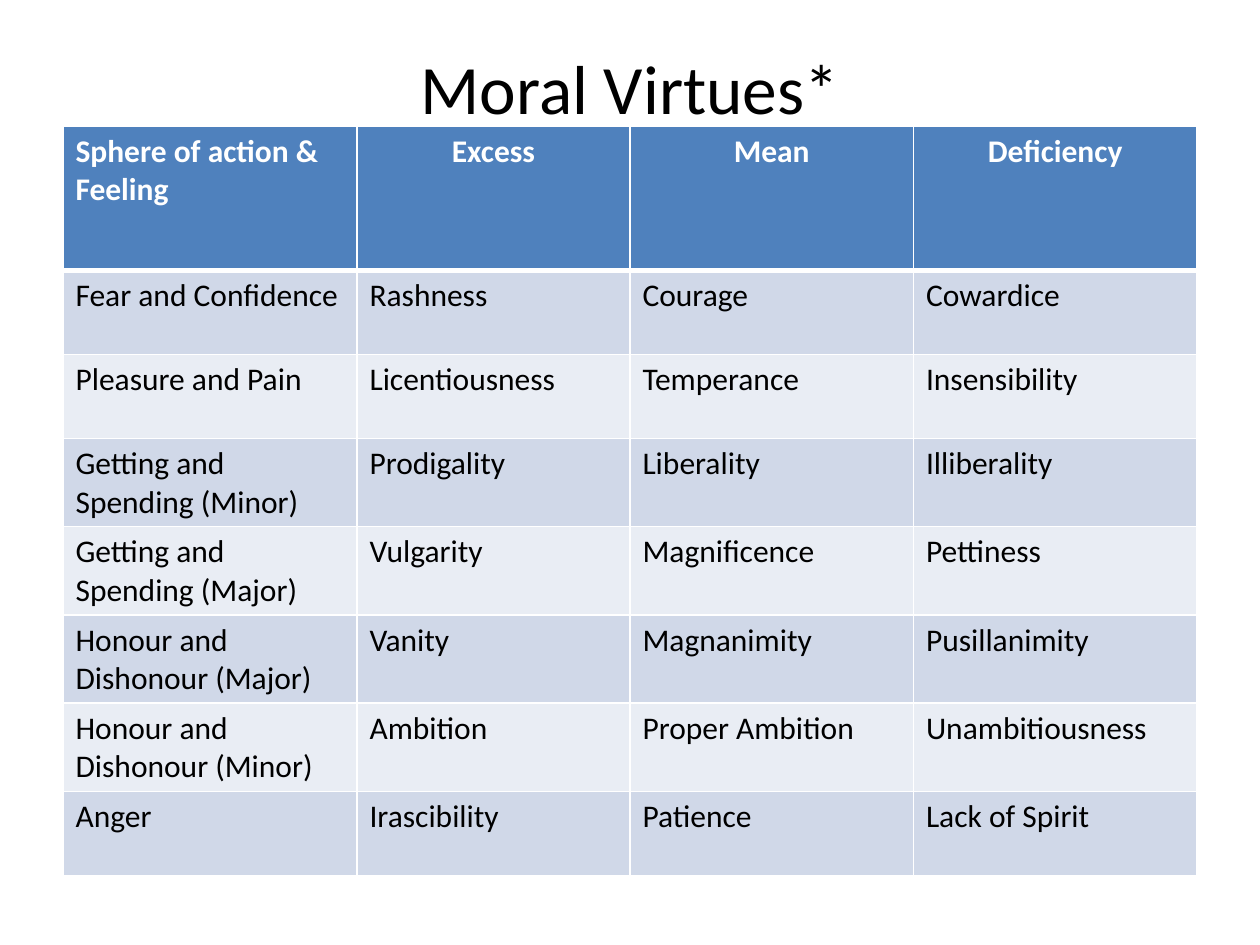
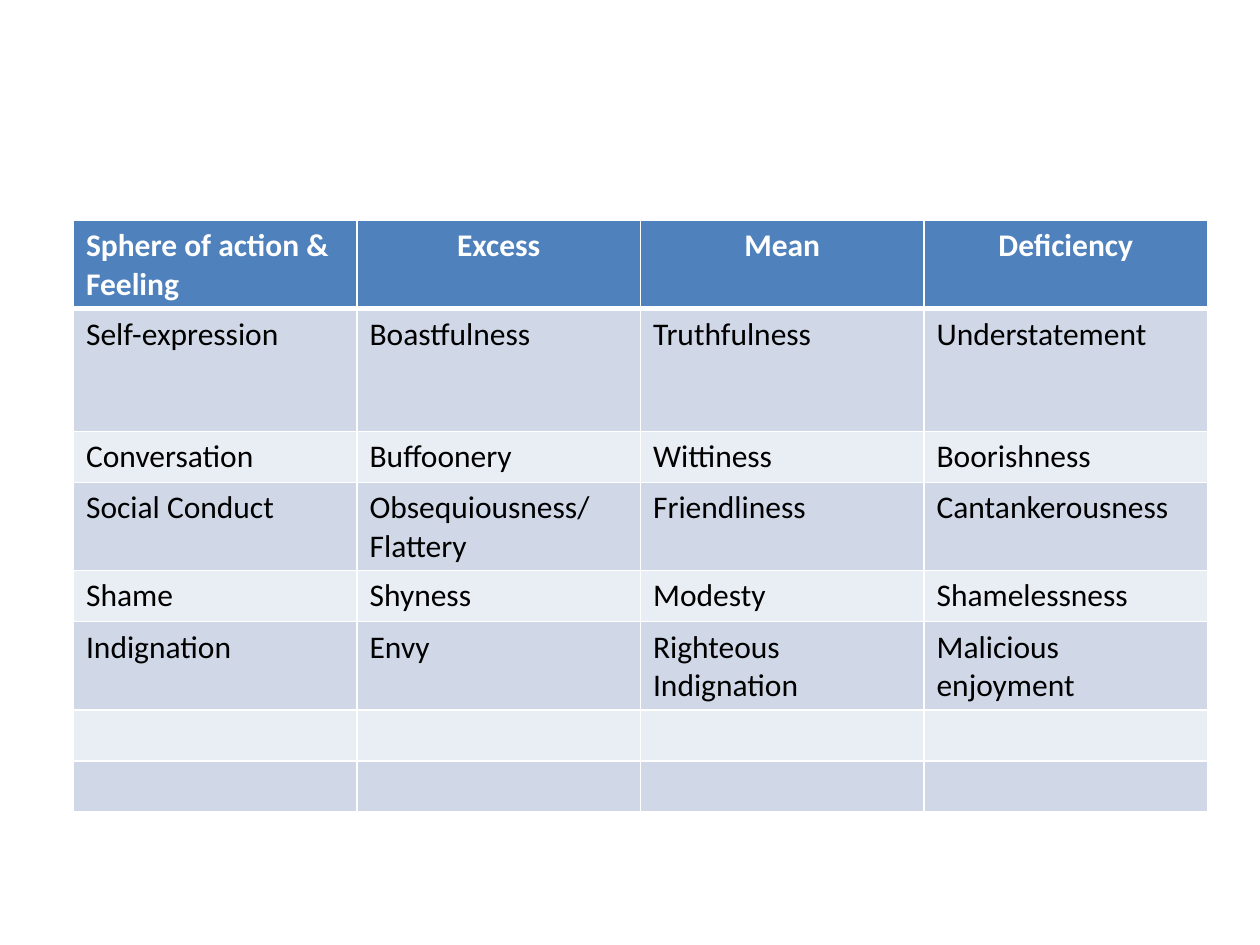
from dataclasses import dataclass

import pptx
import pptx.dml.color
import pptx.enum.text
import pptx.oxml
import pptx.oxml.ns
import pptx.util
from pptx.slide import Slide
from pptx.table import _Cell

# The slide is a grid of 120 columns by 90 rows.
WIDE, HIGH = pptx.util.Inches(10), pptx.util.Inches(7.5)
COLS, ROWS = 120, 90

FONT = "Calibri"
WHITE, BLACK = "FFFFFF", "000000"
HEAD = "4F81BD"
BANDS = ("D0D8E8", "E9EDF4")
THIN, THICK = 1, 3
LABELS = ("Sphere of action & Feeling", "Excess", "Mean", "Deficiency")
MID = pptx.enum.text.PP_ALIGN.CENTER
LEFT = pptx.enum.text.PP_ALIGN.LEFT


@dataclass(frozen=True)
class Chart:
    """A table of virtues, with its place and sizes in grid units."""
    left: float
    top: float
    cols: tuple[float, ...]
    rows: tuple[float, ...]
    body: tuple[tuple[str, ...], ...]
    title: str = ""


VICES = (
    Chart(6, 12, (28, 26, 27, 27), (13.75,) + (8,) * 7, (
        ("Fear and Confidence", "Rashness", "Courage", "Cowardice"),
        ("Pleasure and Pain", "Licentiousness", "Temperance", "Insensibility"),
        ("Getting and Spending (Minor)", "Prodigality", "Liberality", "Illiberality"),
        ("Getting and Spending (Major)", "Vulgarity", "Magnificence", "Pettiness"),
        ("Honour and Dishonour (Major)", "Vanity", "Magnanimity", "Pusillanimity"),
        ("Honour and Dishonour (Minor)", "Ambition", "Proper Ambition", "Unambitiousness"),
        ("Anger", "Irascibility", "Patience", "Lack of Spirit"),
    ), "Moral Virtues*"),
    Chart(7, 21, (27,) * 4, (4.87, 11.67) + (4.87,) * 6, (
        ("Self-expression", "Boastfulness", "Truthfulness", "Understatement"),
        ("Conversation", "Buffoonery", "Wittiness", "Boorishness"),
        ("Social Conduct", "Obsequiousness/\nFlattery", "Friendliness", "Cantankerousness"),
        ("Shame", "Shyness", "Modesty", "Shamelessness"),
        ("Indignation", "Envy", "Righteous Indignation", "Malicious enjoyment"),
        ("",) * 4,
        ("",) * 4,
    )),
)


def across(cols: float) -> int:
    return round(WIDE * cols / COLS)


def down(rows: float) -> int:
    return round(HIGH * rows / ROWS)


def color(code: str) -> pptx.dml.color.RGBColor:
    return pptx.dml.color.RGBColor.from_string(code)


def write(frame, text: str, size: float, ink: str, bold: bool, align) -> None:
    frame.text = text
    for para in frame.paragraphs:
        para.alignment = align
        font = para.font
        font.name, font.size, font.bold = FONT, pptx.util.Pt(size), bold
        font.color.rgb = color(ink)


def edge(cell: _Cell, top: int, foot: int) -> None:
    """Draw white borders; call before filling, as lines precede the fill."""
    for side, width in (("L", THIN), ("R", THIN), ("T", top), ("B", foot)):
        cell._tc.get_or_add_tcPr().append(pptx.oxml.parse_xml(
            f'<a:ln{side} {pptx.oxml.ns.nsdecls("a")} w="{pptx.util.Pt(width)}">'
            f'<a:solidFill><a:srgbClr val="{WHITE}"/></a:solidFill></a:ln{side}>'))


def add_title(slide: Slide, text: str) -> None:
    box = slide.shapes.add_textbox(across(6), down(3.6), across(108), down(9.4))
    frame = box.text_frame
    frame.word_wrap = True
    frame.vertical_anchor = pptx.enum.text.MSO_ANCHOR.MIDDLE
    write(frame, text, 39.6, BLACK, False, MID)


def add_chart(slide: Slide, chart: Chart) -> None:
    lines = (LABELS,) + chart.body
    table = slide.shapes.add_table(
        len(lines), len(LABELS), across(chart.left), down(chart.top),
        across(sum(chart.cols)), down(sum(chart.rows))).table
    for col, size in zip(table.columns, chart.cols):
        col.width = across(size)
    for row, size in zip(table.rows, chart.rows):
        row.height = down(size)
    for r, line in enumerate(lines):
        head = r == 0
        for c, text in enumerate(line):
            cell = table.cell(r, c)
            edge(cell, THICK if r == 1 else THIN, THICK if head else THIN)
            cell.fill.solid()
            cell.fill.fore_color.rgb = color(HEAD if head else BANDS[(r - 1) % 2])
            write(cell.text_frame, text, 18, WHITE if head else BLACK, head,
                  MID if head and c else LEFT)


def main() -> None:
    deck = pptx.Presentation()
    deck.slide_width, deck.slide_height = WIDE, HIGH
    for chart in VICES:
        slide = deck.slides.add_slide(deck.slide_layouts[6])
        if chart.title:
            add_title(slide, chart.title)
        add_chart(slide, chart)
    deck.save("out.pptx")


if __name__ == "__main__":
    main()
